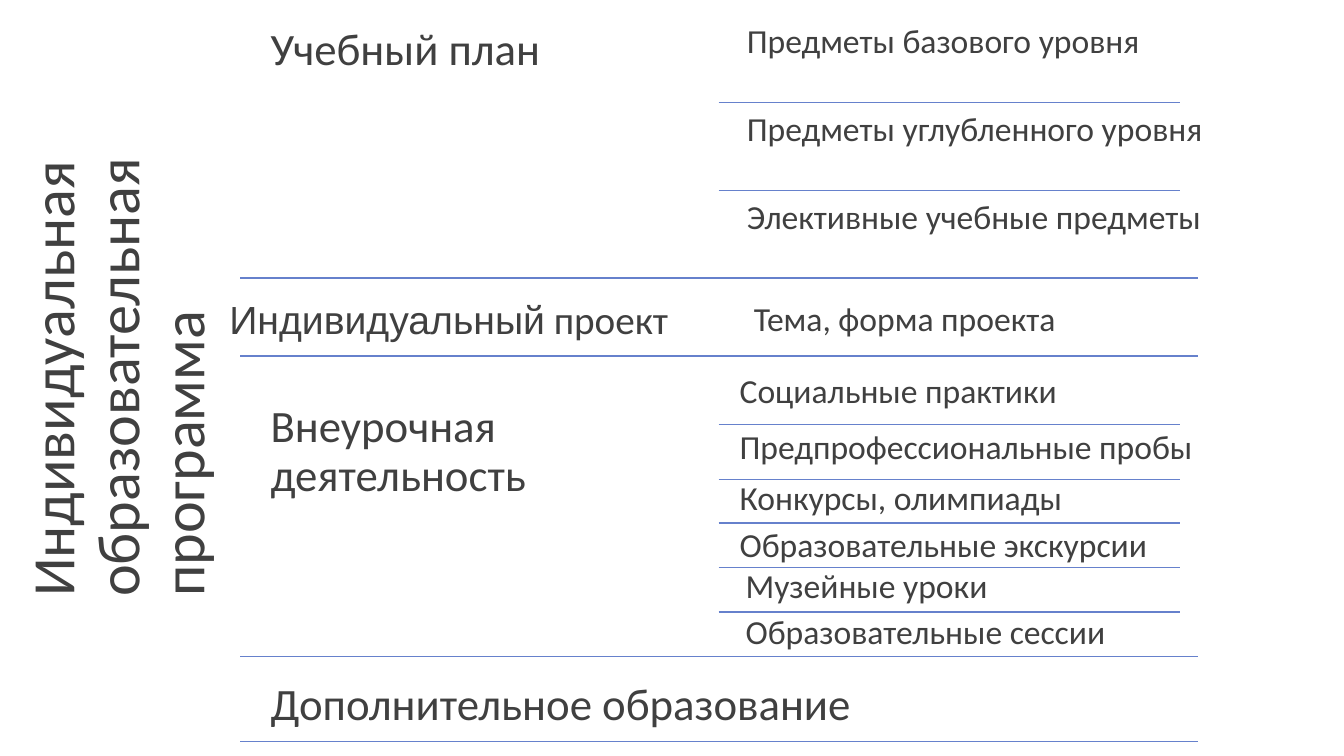
import pptx
import pptx.dml.color
import pptx.enum.shapes
import pptx.enum.text
import pptx.oxml.ns
import pptx.util
from lxml import etree

Cm = pptx.util.Cm
TEXT_COLOUR = "404040"
RULE_COLOUR = "6681CC"
FULL_RULE = (6.05, 30.2)
ITEM_RULE = (18.11, 29.74)
HEADING_LEFT = 6.5

# Item: text, left, offset from section top, width, offset of the rule below
CURRICULUM = [
    (text, 18.57, row * 2.22, width, (row + 1) * 2.22 if row < 2 else None)
    for row, (text, width) in enumerate([
        ("Предметы базового уровня", 11.63),
        ("Предметы углубленного уровня", 13.89),
        ("Элективные учебные предметы", 14.63),
    ])
]
PROJECT = [("Тема, форма проекта", 18.75, 0.36, 11.63, None)]
ACTIVITIES = [
    ("Социальные практики", 18.39, 0.22, 11.63, 1.72),
    ("Предпрофессиональные пробы", 18.39, 1.62, 14.96, 3.12),
    ("Конкурсы, олимпиады", 18.39, 2.92, 11.63, 4.21),
    ("Образовательные экскурсии", 18.39, 4.09, 15.27, 5.33),
    ("Музейные уроки", 18.54, 5.13, 11.63, 6.45),
    ("Образовательные сессии", 18.54, 6.3, 11.63, None),
]

# Section: top, bottom, heading runs, heading size, heading box, items.
# The heading box is left, offset from section top, width, height.
SECTIONS = [
    (0.36, 7.01, [("Учебный план", "Calibri")], 32,
     (HEADING_LEFT, 0, 11.63, 2.57), CURRICULUM),
    (7.01, 8.97, [("Индивидуальный", "Arial"), (" проект", "Calibri")], 28,
     (5.46, 0.25, 13.34, 1.63), PROJECT),
    (8.97, 16.54, [("Внеурочная деятельность", "Calibri")], 32,
     (HEADING_LEFT, 0.89, 11.63, 6.68), ACTIVITIES),
    (16.54, 18.69, [("Дополнительное образование", "Calibri")], 32,
     (HEADING_LEFT, 0.33, 17.3, 1.83), []),
]


def colour(hex_string):
    return pptx.dml.color.RGBColor.from_string(hex_string)


def add_label(slide, box, runs, size, inset):
    """Place a wrapped text box; runs is a list of (text, font) pairs."""
    label = slide.shapes.add_textbox(*(Cm(length) for length in box))
    frame = label.text_frame
    frame.word_wrap = True
    frame.margin_left = frame.margin_right = Cm(inset)
    frame.margin_top = frame.margin_bottom = Cm(inset)
    paragraph = frame.paragraphs[0]
    paragraph.line_spacing = 0.9
    for text, font in runs:
        run = paragraph.add_run()
        run.text = text
        run.font.name = font
        run.font.size = pptx.util.Pt(size)
        run.font.color.rgb = colour(TEXT_COLOUR)
    return frame


def add_rule(slide, span, y):
    left, right = span
    rule = slide.shapes.add_connector(
        pptx.enum.shapes.MSO_CONNECTOR.STRAIGHT, Cm(left), Cm(y), Cm(right), Cm(y))
    rule.line.color.rgb = colour(RULE_COLOUR)
    rule.line.width = pptx.util.Pt(1)
    etree.SubElement(rule._element.spPr, pptx.oxml.ns.qn("a:effectLst"))


def add_programme_name(slide, box):
    """Place the name of the whole programme, reading upwards."""
    name = [("Индивидуальная образовательная программа", "Calibri")]
    frame = add_label(slide, box, name, 43, 0.46)
    frame.vertical_anchor = pptx.enum.text.MSO_ANCHOR.MIDDLE
    body = frame._txBody.bodyPr
    body.set("vert", "vert270")
    body.set("anchorCtr", "1")


def add_section(slide, top, bottom, heading, size, heading_box, items):
    """Place a heading, its ruled items and the closing rule."""
    left, offset, width, height = heading_box
    add_label(slide, (left, top + offset, width, height), heading, size, 0.32)
    item_height = min(2.22, (bottom - top) / max(len(items), 1))
    for text, item_left, item_offset, item_width, rule_offset in items:
        add_label(slide, (item_left, top + item_offset, item_width, item_height),
                  [(text, "Calibri")], 24, 0.25)
        if rule_offset is not None:
            add_rule(slide, ITEM_RULE, top + rule_offset)
    add_rule(slide, FULL_RULE, bottom)


def main():
    presentation = pptx.Presentation()
    presentation.slide_width = Cm(33.87)
    presentation.slide_height = Cm(19.05)
    blank_layout = presentation.slide_layouts[6]
    slide = presentation.slides.add_slide(blank_layout)

    # Programme name at the left, its sections at the right
    add_programme_name(slide, (0, 0, 6.05, 19.02))
    for section in SECTIONS:
        add_section(slide, *section)

    presentation.save("out.pptx")


if __name__ == "__main__":
    main()
